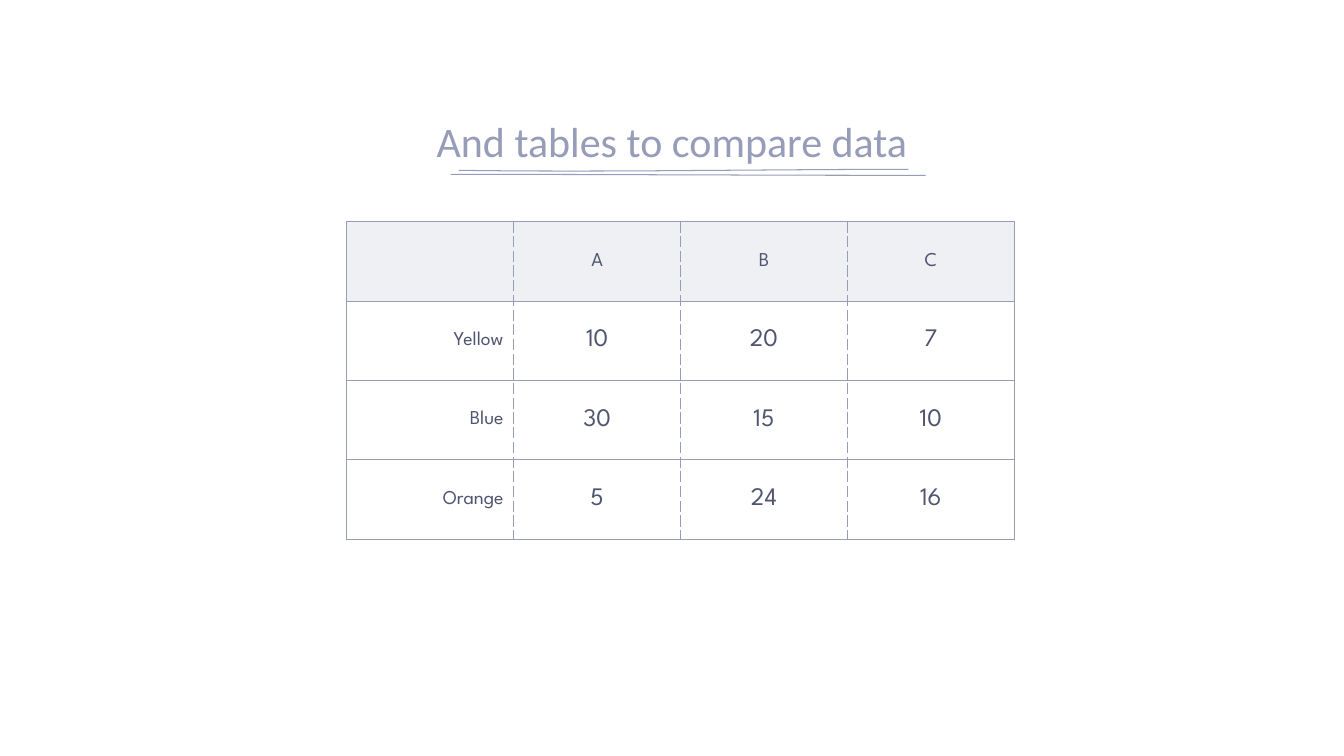
"""Builds a slide with an underlined title and a table comparing three colours."""
from dataclasses import dataclass

from lxml import etree
from pptx import Presentation
from pptx.dml.color import RGBColor
from pptx.enum.text import MSO_ANCHOR, PP_ALIGN
from pptx.oxml.ns import qn
from pptx.slide import Slide
from pptx.table import _Cell
from pptx.text.text import TextFrame
from pptx.util import Inches, Pt

CENTER, RIGHT = PP_ALIGN.CENTER, PP_ALIGN.RIGHT
MIDDLE, BOTTOM = MSO_ANCHOR.MIDDLE, MSO_ANCHOR.BOTTOM


@dataclass(frozen=True)
class Theme:
    accent: str = "979CB8"
    ink: str = "505670"
    title_font: str = "Calibri"
    body_font: str = "League Spartan"
    title_size: float = 30
    label_size: float = 14
    value_size: float = 18
    line_width: float = 0.75
    header_opacity: int = 15


@dataclass(frozen=True)
class Box:
    left: float
    top: float
    width: float
    height: float


@dataclass(frozen=True)
class Stroke:
    start: tuple[float, float]
    bend_1: tuple[float, float]
    bend_2: tuple[float, float]
    end: tuple[float, float]

    def point(self, t: float) -> tuple[int, int]:
        """Return the point of the curve at t, in EMU."""
        u = 1 - t
        weights = (u ** 3, 3 * u * u * t, 3 * u * t * t, t ** 3)
        knots = (self.start, self.bend_1, self.bend_2, self.end)
        x, y = (sum(w * k[axis] for w, k in zip(weights, knots)) for axis in (0, 1))
        return Inches(x), Inches(y)


THEME = Theme()
MARGIN = Inches(0.1)
STEPS = 16
TITLE_BOX = Box(2.79, 0.75, 7.75, 1)
TABLE_BOX = Box(3.44, 2.2, 6.62, 3.15)
UNDERLINES = (
    Stroke((4.55, 1.69), (6.04, 1.71), (7.53, 1.68), (9.01, 1.68)),
    Stroke((4.47, 1.73), (6.04, 1.73), (7.61, 1.74), (9.18, 1.74)),
)
ROWS = (
    ("", "A", "B", "C"),
    ("Yellow", "10", "20", "7"),
    ("Blue", "30", "15", "10"),
    ("Orange", "5", "24", "16"),
)


def add_text(tf: TextFrame, text: str, font: str, size: float, color: str,
             align: PP_ALIGN) -> None:
    """Write one aligned run into the first paragraph."""
    p = tf.paragraphs[0]
    p.alignment = align
    r = p.add_run()
    r.text = text
    r.font.name = font
    r.font.size = Pt(size)
    r.font.color.rgb = RGBColor.from_string(color)


def add_underline(s: Slide, stroke: Stroke) -> None:
    """Draw one slightly curved line under the title."""
    builder = s.shapes.build_freeform(*stroke.point(0))
    builder.add_line_segments([stroke.point(i / STEPS) for i in range(1, STEPS + 1)],
                              close=False)
    sp = builder.convert_to_shape()
    sp.shadow.inherit = False
    sp.fill.background()
    sp.line.color.rgb = RGBColor.from_string(THEME.accent)
    sp.line.width = Pt(THEME.line_width)


def add_title(s: Slide, box: Box, text: str) -> None:
    """Add the centred slide title."""
    sp = s.shapes.add_textbox(Inches(box.left), Inches(box.top),
                              Inches(box.width), Inches(box.height))
    tf = sp.text_frame
    tf.word_wrap = True
    tf.vertical_anchor = BOTTOM
    tf.margin_left = tf.margin_right = tf.margin_top = tf.margin_bottom = MARGIN
    add_text(tf, text, THEME.title_font, THEME.title_size, THEME.accent, CENTER)


def add_border(cell: _Cell, side: str, dash: str) -> None:
    """Add one border line to a cell."""
    ln = etree.SubElement(cell._tc.get_or_add_tcPr(), qn(f"a:ln{side}"),
                          w=str(Pt(THEME.line_width)))
    fill = etree.SubElement(ln, qn("a:solidFill"))
    etree.SubElement(fill, qn("a:srgbClr"), val=THEME.accent)
    etree.SubElement(ln, qn("a:prstDash"), val=dash)


def fill_header(cell: _Cell) -> None:
    """Give a header cell its translucent tint."""
    cell.fill.solid()
    cell.fill.fore_color.rgb = RGBColor.from_string(THEME.accent)
    color = cell._tc.tcPr.find(f"{qn('a:solidFill')}/{qn('a:srgbClr')}")
    etree.SubElement(color, qn("a:alpha"), val=str(THEME.header_opacity * 1000))


def format_cell(cell: _Cell, text: str, row: int, col: int, last_col: int) -> None:
    """Set the margins, borders, fill and text of one cell."""
    cell.margin_left = cell.margin_right = MARGIN
    cell.margin_top = cell.margin_bottom = MARGIN
    cell.vertical_anchor = MIDDLE
    add_border(cell, "L", "solid" if col == 0 else "dash")
    add_border(cell, "R", "solid" if col == last_col else "dash")
    add_border(cell, "T", "solid")
    add_border(cell, "B", "solid")
    if row == 0:
        fill_header(cell)
    else:
        cell.fill.background()
    if text:
        is_label = row == 0 or col == 0
        add_text(cell.text_frame, text, THEME.body_font,
                 THEME.label_size if is_label else THEME.value_size,
                 THEME.ink, RIGHT if col == 0 else CENTER)


def add_data_table(s: Slide, box: Box, rows: tuple[tuple[str, ...], ...]) -> None:
    """Add the table with equal rows and columns."""
    table = s.shapes.add_table(len(rows), len(rows[0]), Inches(box.left), Inches(box.top),
                               Inches(box.width), Inches(box.height)).table
    table.first_row = table.horz_banding = False
    for row, texts in enumerate(rows):
        for col, text in enumerate(texts):
            format_cell(table.cell(row, col), text, row, col, len(texts) - 1)


def main() -> None:
    """Build and save the slide."""
    prs = Presentation()
    prs.slide_width, prs.slide_height = Inches(13.33), Inches(7.5)
    s = prs.slides.add_slide(prs.slide_layouts[6])
    for stroke in UNDERLINES:
        add_underline(s, stroke)
    add_title(s, TITLE_BOX, "And tables to compare data")
    add_data_table(s, TABLE_BOX, ROWS)
    prs.save("out.pptx")


if __name__ == "__main__":
    main()
